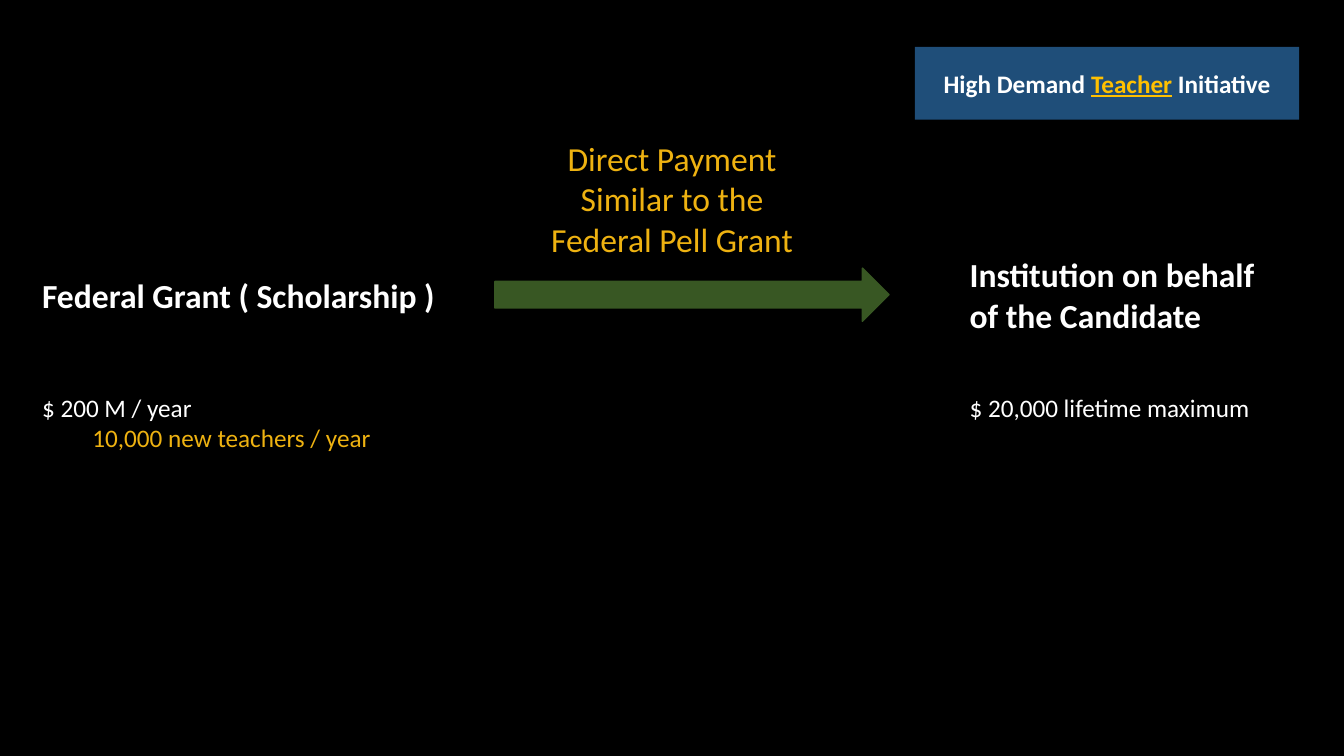
from pptx import Presentation
from pptx import util as u
from pptx.dml.color import RGBColor
from pptx.enum import shapes, text

WHITE, GOLD, AMBER = "FFFFFF", "EEB211", "FFC000"
BLACK, BLUE, GREEN = "000000", "1F4E79", "385723"
LEFT_COLUMN, RIGHT_COLUMN = 23, 685.5
AMOUNT_TOP = 276.5


def paint(target, color):
    if hasattr(target, "solid"):
        target.solid()
        target = target.fore_color
    target.rgb = RGBColor.from_string(color)


def write(frame, lines, size, bold=False, align=text.PP_ALIGN.LEFT):
    frame.word_wrap = True
    for index, (line, color) in enumerate(lines):
        paragraph = frame.paragraphs[0] if index == 0 else frame.add_paragraph()
        paragraph.text = line
        paragraph.alignment = align
        paragraph.font.name = "Calibri"
        paragraph.font.size = u.Pt(size)
        paragraph.font.bold = bold
        paint(paragraph.font.color, color)


presentation = Presentation()
presentation.slide_width = u.Pt(960)
presentation.slide_height = u.Pt(540)
slide = presentation.slides.add_slide(presentation.slide_layouts[6])
paint(slide.background.fill, BLACK)

banner = slide.shapes.add_shape(
    shapes.MSO_SHAPE.RECTANGLE, u.Pt(653.5), u.Pt(33.5), u.Pt(274.5), u.Pt(52))
banner.shadow.inherit = False
paint(banner.fill, BLUE)
banner.line.fill.background()
banner.text_frame.vertical_anchor = text.MSO_ANCHOR.MIDDLE
write(banner.text_frame, [("", WHITE)], 18, True, text.PP_ALIGN.CENTER)
for words, color in [("High Demand ", WHITE), ("Teacher", AMBER), (" Initiative", WHITE)]:
    run = banner.text_frame.paragraphs[0].add_run()
    run.text = words
    run.font.underline = color == AMBER
    paint(run.font.color, color)

arrow = slide.shapes.add_shape(
    shapes.MSO_SHAPE.RIGHT_ARROW, u.Pt(353.5), u.Pt(191.5), u.Pt(281.5), u.Pt(38))
arrow.shadow.inherit = False
paint(arrow.fill, GREEN)
paint(arrow.line.fill, GREEN)
arrow.line.width = u.Pt(1)

text_boxes = [
    (LEFT_COLUMN, 193, 310, 36, 24, True, text.PP_ALIGN.LEFT,
     [("Federal Grant ( Scholarship )", WHITE)]),
    (RIGHT_COLUMN, 178, 236, 65.5, 24, True, text.PP_ALIGN.LEFT,
     [("Institution on behalf", WHITE), ("of the Candidate", WHITE)]),
    (0, 95, 960, 94.5, 24, False, text.PP_ALIGN.CENTER,
     [("Direct Payment", GOLD), ("Similar to the", GOLD), ("Federal Pell Grant", GOLD)]),
    (LEFT_COLUMN, AMOUNT_TOP, 271.5, 51, 18, False, text.PP_ALIGN.LEFT,
     [("$ 200 M / year", WHITE), ("10,000 new teachers / year", GOLD)]),
    (RIGHT_COLUMN, AMOUNT_TOP, 271.5, 29, 18, False, text.PP_ALIGN.LEFT,
     [("$ 20,000 lifetime maximum", WHITE)]),
]
for left, top, width, height, size, bold, align, lines in text_boxes:
    box = slide.shapes.add_textbox(u.Pt(left), u.Pt(top), u.Pt(width), u.Pt(height))
    write(box.text_frame, lines, size, bold, align)
    box.text_frame.auto_size = text.MSO_AUTO_SIZE.SHAPE_TO_FIT_TEXT
    for paragraph in box.text_frame.paragraphs:
        if paragraph.text.endswith("teachers / year"):
            paragraph.level = 1
            properties = paragraph._p.get_or_add_pPr()
            properties.set("marL", str(u.Pt(36)))
            properties.set("indent", "0")

presentation.save("out.pptx")
